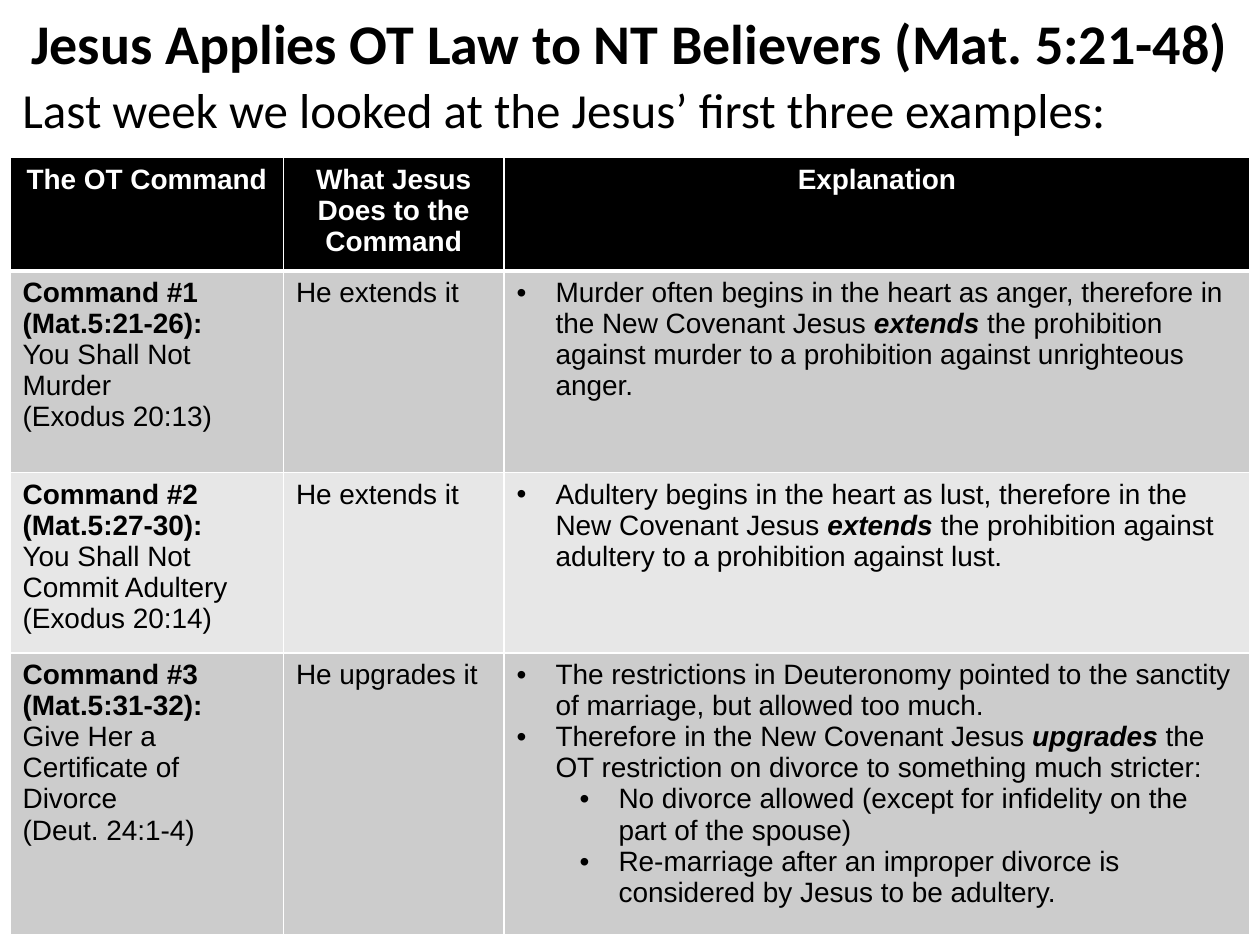
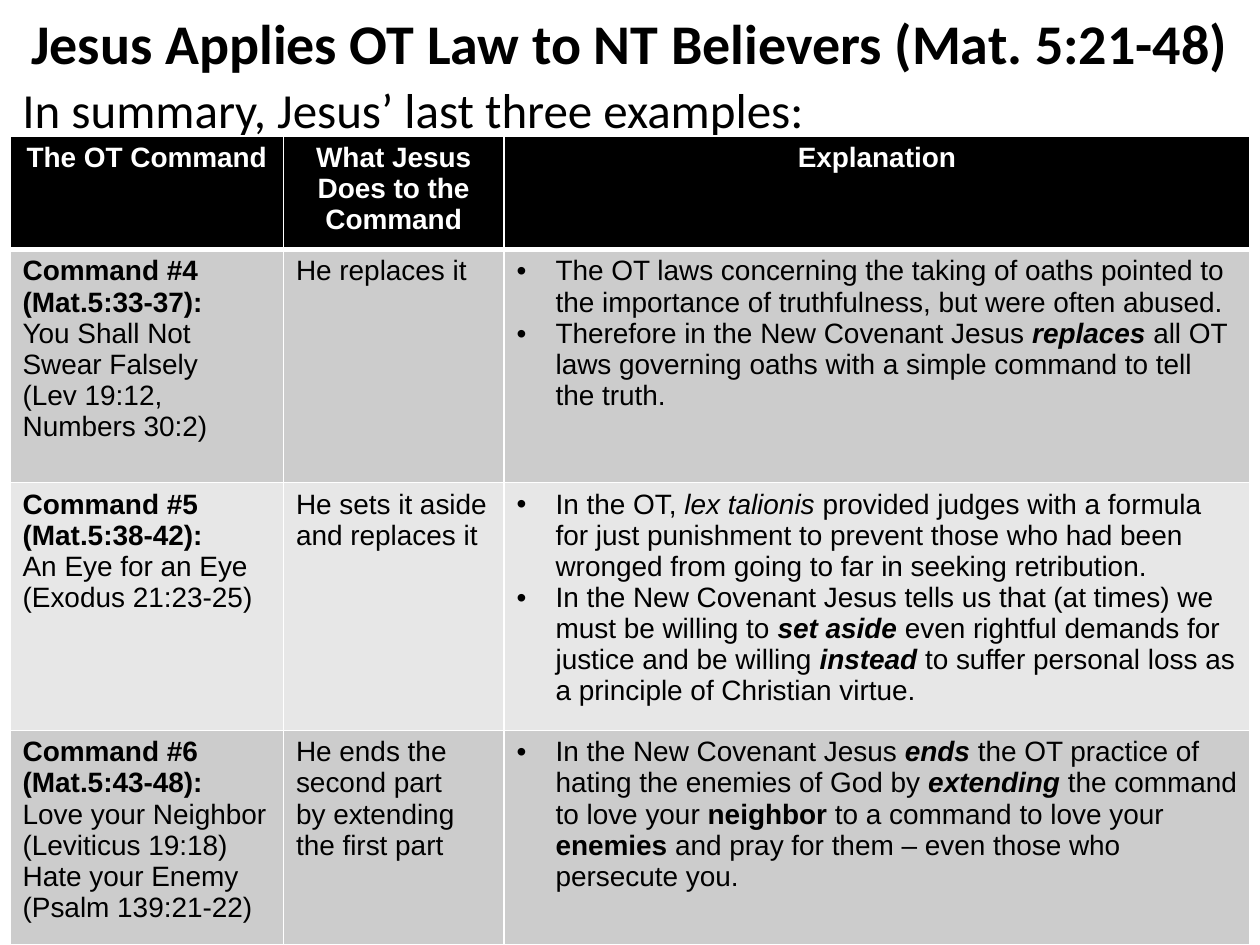
from lxml import etree
from pptx import Presentation
from pptx.dml.color import RGBColor
from pptx.enum.text import MSO_ANCHOR, PP_ALIGN
from pptx.oxml.ns import qn
from pptx.util import Inches, Pt

BLACK = RGBColor(0x00, 0x00, 0x00)
WHITE = RGBColor(0xFF, 0xFF, 0xFF)
BANDS = [RGBColor(0xCC, 0xCC, 0xCC), RGBColor(0xE7, 0xE7, 0xE7)]
CENTER, LEFT = PP_ALIGN.CENTER, PP_ALIGN.LEFT
TOP, MIDDLE = MSO_ANCHOR.TOP, MSO_ANCHOR.MIDDLE

SLIDE_W, SLIDE_H = 10, 7.5
MARGIN = 0.08
COLUMNS = [2.17, 1.75, 5.92]
TABLE_W = sum(COLUMNS)
BULLET_INDENT, LEVEL_INDENT = 0.31, 0.5
THIN, THICK = Pt(1), Pt(3)

TITLE = "Jesus Applies OT Law to NT Believers (Mat. 5:21-48)"
HEADERS = ["The OT Command", "What Jesus Does to the Command", "Explanation"]

# Each row: command lines, what Jesus does, bullets as (level, runs);
# a run is (text, style), where style holds "b" for bold and "i" for italic
SLIDES = [
    ("Last week we looked at the Jesus’ first three examples:", 1.25, [0.84, 1.6, 1.33, 2.08], [
        (["Command #1 (Mat.5:21-26):", "You Shall Not Murder", "(Exodus 20:13)"],
         ["He extends it"],
         [(0, [("Murder often begins in the heart as anger, therefore in the New Covenant Jesus ", ""),
               ("extends", "bi"),
               (" the prohibition against murder to a prohibition against unrighteous anger.", "")])]),
        (["Command #2 (Mat.5:27-30):", "You Shall Not Commit Adultery (Exodus 20:14)"],
         ["He extends it"],
         [(0, [("Adultery begins in the heart as lust, therefore in the New Covenant Jesus ", ""),
               ("extends", "bi"),
               (" the prohibition against adultery to a prohibition against lust.", "")])]),
        (["Command #3 (Mat.5:31-32):", "Give Her a Certificate of Divorce", "(Deut. 24:1-4)"],
         ["He upgrades it"],
         [(0, [("The restrictions in Deuteronomy pointed to the sanctity of marriage, "
                "but allowed too much.", "")]),
          (0, [("Therefore in the New Covenant Jesus ", ""), ("upgrades", "bi"),
               (" the OT restriction on divorce to something much stricter:", "")]),
          (1, [("No divorce allowed (except for infidelity on the part of the spouse)", "")]),
          (1, [("Re-marriage after an improper divorce is considered by Jesus "
                "to be adultery.", "")])]),
    ]),
    ("In summary, Jesus’ last three examples:", 1.08, [0.84, 1.85, 1.83, 1.58], [
        (["Command #4 (Mat.5:33-37):", "You Shall Not Swear Falsely", "(Lev 19:12, Numbers 30:2)"],
         ["He replaces it"],
         [(0, [("The OT laws concerning the taking of oaths pointed to the importance "
                "of truthfulness, but were often abused.", "")]),
          (0, [("Therefore in the New Covenant Jesus ", ""), ("replaces", "bi"),
               (" all OT laws governing oaths with a simple command to tell the truth.", "")])]),
        (["Command #5 (Mat.5:38-42):", "An Eye for an Eye (Exodus 21:23-25)"],
         ["He sets it aside and replaces it"],
         [(0, [("In the OT, ", ""), ("lex talionis ", "i"),
               ("provided judges with a formula for just punishment to prevent those who "
                "had been wronged from going to far in seeking retribution.", "")]),
          (0, [("In the New Covenant Jesus tells us that (at times) we must be willing to ", ""),
               ("set aside ", "bi"),
               ("even rightful demands for justice and be willing ", ""),
               ("instead", "bi"),
               (" to suffer personal loss as a principle of Christian virtue.", "")])]),
        (["Command #6 (Mat.5:43-48):", "Love your Neighbor",
          "(Leviticus 19:18) Hate your Enemy (Psalm 139:21-22)"],
         ["He ends the second part", "by extending the first part"],
         [(0, [("In the New Covenant Jesus ", ""), ("ends ", "bi"),
               ("the OT practice of hating the enemies of God by ", ""),
               ("extending", "bi"), (" the command to love your ", ""),
               ("neighbor", "b"), (" to a command to love your ", ""),
               ("enemies", "b"),
               (" and pray for them – even those who persecute you.", "")])]),
    ]),
]


def write(tf, paragraphs, size, font="Arial", color=BLACK, align=LEFT):
    """Fill a text frame from (level, runs) pairs; level None means no bullet."""
    for i, (level, runs) in enumerate(paragraphs):
        p = tf.add_paragraph() if i else tf.paragraphs[0]
        p.alignment = align
        if level is not None:
            p.level = level
            pPr = p._p.get_or_add_pPr()
            pPr.set("marL", str(Inches(BULLET_INDENT + LEVEL_INDENT * level)))
            pPr.set("indent", str(-Inches(BULLET_INDENT)))
            etree.SubElement(pPr, qn("a:buFont"), typeface="Arial")
            etree.SubElement(pPr, qn("a:buChar"), char="•")
        for text, style in runs:
            r = p.add_run()
            r.text = text
            r.font.name, r.font.size = font, Pt(size)
            r.font.bold, r.font.italic = "b" in style, "i" in style
            r.font.color.rgb = color


def style_cell(cell, fill, top, bottom):
    """Draw white borders and set the cell's fill."""
    tcPr = cell._tc.get_or_add_tcPr()
    for side, width in (("L", THIN), ("R", THIN), ("T", top), ("B", bottom)):
        ln = etree.SubElement(tcPr, qn(f"a:ln{side}"), w=str(width))
        solid = etree.SubElement(ln, qn("a:solidFill"))
        etree.SubElement(solid, qn("a:srgbClr"), val=str(WHITE))
    cell.fill.solid()
    cell.fill.fore_color.rgb = fill


prs = Presentation()
prs.slide_width, prs.slide_height = Inches(SLIDE_W), Inches(SLIDE_H)

for intro, table_top, heights, commands in SLIDES:
    s = prs.slides.add_slide(prs.slide_layouts[6])

    # Title and introduction
    for text, style, size, align, anchor, box in (
        (TITLE, "b", 32, CENTER, MIDDLE, (0, 0, SLIDE_W, 0.67)),
        (intro, "", 28, LEFT, TOP, (MARGIN, 0.58, TABLE_W, 0.58)),
    ):
        tf = s.shapes.add_textbox(*map(Inches, box)).text_frame
        tf.word_wrap = True
        tf.vertical_anchor = anchor
        write(tf, [(None, [(text, style)])], size, "Calibri", align=align)

    # Table grid
    table = s.shapes.add_table(
        len(heights), len(COLUMNS), Inches(MARGIN), Inches(table_top),
        Inches(TABLE_W), Inches(sum(heights))).table
    table.horz_banding = False
    for column, width in zip(table.columns, COLUMNS):
        column.width = Inches(width)
    for row, height in zip(table.rows, heights):
        row.height = Inches(height)

    # Header row
    for cell, header in zip(table.rows[0].cells, HEADERS):
        style_cell(cell, BLACK, THIN, THICK)
        write(cell.text_frame, [(None, [(header, "b")])], 16, color=WHITE, align=CENTER)

    # Command rows
    for n, (command, action, explanation) in enumerate(commands):
        contents = [
            [(None, [(line, "" if i else "b")]) for i, line in enumerate(command)],
            [(None, [(line, "")]) for line in action],
            explanation,
        ]
        for cell, paragraphs in zip(table.rows[n + 1].cells, contents):
            style_cell(cell, BANDS[n % 2], THIN if n else THICK, THIN)
            write(cell.text_frame, paragraphs, 16)

prs.save("out.pptx")
